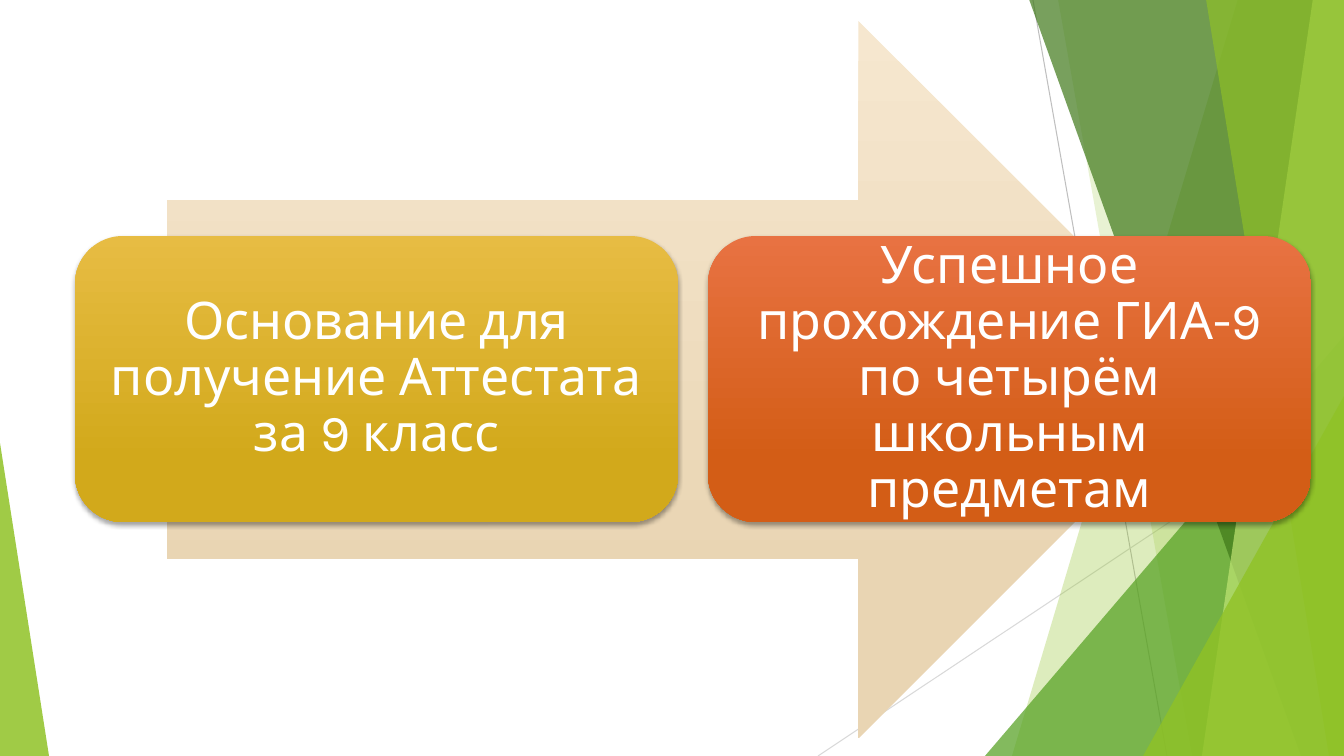
"""Build a slide with two process steps on an arrow over a green faceted backdrop."""
from dataclasses import dataclass

from lxml import etree
from pptx import Presentation
from pptx.dml.color import RGBColor
from pptx.enum.shapes import MSO_CONNECTOR, MSO_SHAPE
from pptx.enum.text import MSO_ANCHOR, PP_ALIGN
from pptx.oxml.ns import qn
from pptx.shapes.autoshape import Shape
from pptx.shapes.shapetree import SlideShapes
from pptx.util import Emu, Pt

STRAIGHT = MSO_CONNECTOR.STRAIGHT
TRIANGLE = MSO_SHAPE.ISOSCELES_TRIANGLE
ARROW = MSO_SHAPE.RIGHT_ARROW
ROUNDED = MSO_SHAPE.ROUNDED_RECTANGLE
MIDDLE = MSO_ANCHOR.MIDDLE
CENTER = PP_ALIGN.CENTER

EMU_PER_PX = 914400 / 100.8
SLIDE_W, SLIDE_H = 1344, 756
BLEED = 1
STEP_TOP, STEP_W, STEP_H = 236, 603, 286
STEP_INSET = 15

COLORS = {
    "grey": "BFBFBF", "pale grey": "D9D9D9",
    "green": "90C226", "leaf": "54A021", "forest": "3F7819", "lime": "C0E474",
    "cream": "F6E7CF", "sand": "E9D5B3",
    "light gold": "E7BC43", "gold": "D2A91B",
    "light orange": "E87242", "orange": "D35D16",
    "white": "FFFFFF", "black": "000000",
}


@dataclass(frozen=True)
class Ray:
    start: tuple[int, int]
    end: tuple[int, int]
    color: str


@dataclass(frozen=True)
class Band:
    top_x: int
    bottom_x: int
    color: str
    opacity: int


@dataclass(frozen=True)
class Wedge:
    left: int
    top: int
    width: int
    apex: int
    color: str
    opacity: int


@dataclass(frozen=True)
class Step:
    left: int
    text: str
    light: str
    deep: str


RAYS = [
    Ray((1033, 0), (1167, SLIDE_H), "grey"),
    Ray((SLIDE_W, 406), (818, SLIDE_H), "pale grey"),
]
FACETS = [
    Band(1238, 1012, "green", 30),
    Band(1058, 1192, "green", 20),
    Wedge(985, 336, 359, 1, "leaf", 72),
    Band(1029, 1301, "forest", 70),
    Band(1313, 1202, "lime", 70),
    Band(1206, 1329, "green", 65),
    Wedge(1143, 396, 201, 1, "green", 80),
    Wedge(0, 443, 49, 0, "green", 85),
]
STEPS = [
    Step(75, "Основание для получение Аттестата за 9 класс", "light gold", "gold"),
    Step(708, "Успешное прохождение ГИА-9 по четырём школьным предметам",
         "light orange", "orange"),
]


def px(length: int) -> Emu:
    return Emu(round(length * EMU_PER_PX))


def rgb(name: str) -> RGBColor:
    return RGBColor.from_string(COLORS[name])


def set_all(target: object, formats: dict[str, object]) -> None:
    for name, value in formats.items():
        setattr(target, name, value)


def make_plain(shape: Shape) -> None:
    shape.shadow.inherit = False
    shape.line.fill.background()


def add_preset(shapes: SlideShapes, kind: MSO_SHAPE, *box: int) -> Shape:
    shape = shapes.add_shape(kind, *map(px, box))
    make_plain(shape)
    return shape


def fill_translucent(shape: Shape, color: str, opacity: int) -> None:
    shape.fill.solid()
    shape.fill.fore_color.rgb = rgb(color)
    tint = shape.element.spPr.find(".//" + qn("a:srgbClr"))
    etree.SubElement(tint, qn("a:alpha"), val=str(opacity * 1000))


def fill_downward(shape: Shape, light: str, deep: str) -> None:
    shape.fill.gradient()
    shape.fill.gradient_angle = 270
    for stop, color, position in zip(shape.fill.gradient_stops, (light, deep), (0, 0.78)):
        stop.color.rgb = rgb(color)
        stop.position = position


def cast_shadow(shape: Shape) -> None:
    effects = shape.element.spPr.find(qn("a:effectLst"))
    shadow = etree.SubElement(effects, qn("a:outerShdw"), blurRad=str(Pt(3)),
                              dist=str(Pt(2)), dir="5400000", rotWithShape="0")
    tint = etree.SubElement(shadow, qn("a:srgbClr"), val=COLORS["black"])
    etree.SubElement(tint, qn("a:alpha"), val="35000")


def draw_ray(shapes: SlideShapes, ray: Ray) -> None:
    connector = shapes.add_connector(STRAIGHT, *map(px, ray.start + ray.end))
    connector.line.color.rgb = rgb(ray.color)
    connector.line.width = Pt(0.75)
    etree.SubElement(connector.element.spPr, qn("a:effectLst"))


def draw_facet(shapes: SlideShapes, facet: Band | Wedge) -> None:
    if isinstance(facet, Band):
        outline = shapes.build_freeform(facet.top_x, -BLEED, scale=EMU_PER_PX)
        outline.add_line_segments(
            [(SLIDE_W, -BLEED), (SLIDE_W, SLIDE_H), (facet.bottom_x, SLIDE_H)])
        shape = outline.convert_to_shape()
        make_plain(shape)
    else:
        shape = add_preset(shapes, TRIANGLE, facet.left, facet.top,
                           facet.width, SLIDE_H - facet.top)
        shape.adjustments[0] = facet.apex
    fill_translucent(shape, facet.color, facet.opacity)


def draw_step(shapes: SlideShapes, step: Step) -> None:
    card = add_preset(shapes, ROUNDED, step.left, STEP_TOP, STEP_W, STEP_H)
    fill_downward(card, step.light, step.deep)
    cast_shadow(card)
    frame = card.text_frame
    margins = ("margin_left", "margin_top", "margin_right", "margin_bottom")
    set_all(frame, {"word_wrap": True, "vertical_anchor": MIDDLE,
                    **dict.fromkeys(margins, px(STEP_INSET))})
    caption = frame.paragraphs[0]
    set_all(caption, {"alignment": CENTER, "line_spacing": 0.9})
    run = caption.add_run()
    run.text = step.text
    set_all(run.font, {"name": "Karla", "size": Pt(37)})
    run.font.color.rgb = rgb("white")


def main() -> None:
    deck = Presentation()
    set_all(deck, {"slide_width": px(SLIDE_W), "slide_height": px(SLIDE_H)})
    shapes = deck.slides.add_slide(deck.slide_layouts[6]).shapes
    for ray in RAYS:
        draw_ray(shapes, ray)
    for facet in FACETS:
        draw_facet(shapes, facet)
    arrow = add_preset(shapes, ARROW, 167, 21, 1050, 717)
    fill_downward(arrow, "cream", "sand")
    for step in STEPS:
        draw_step(shapes, step)
    deck.save("out.pptx")


if __name__ == "__main__":
    main()
